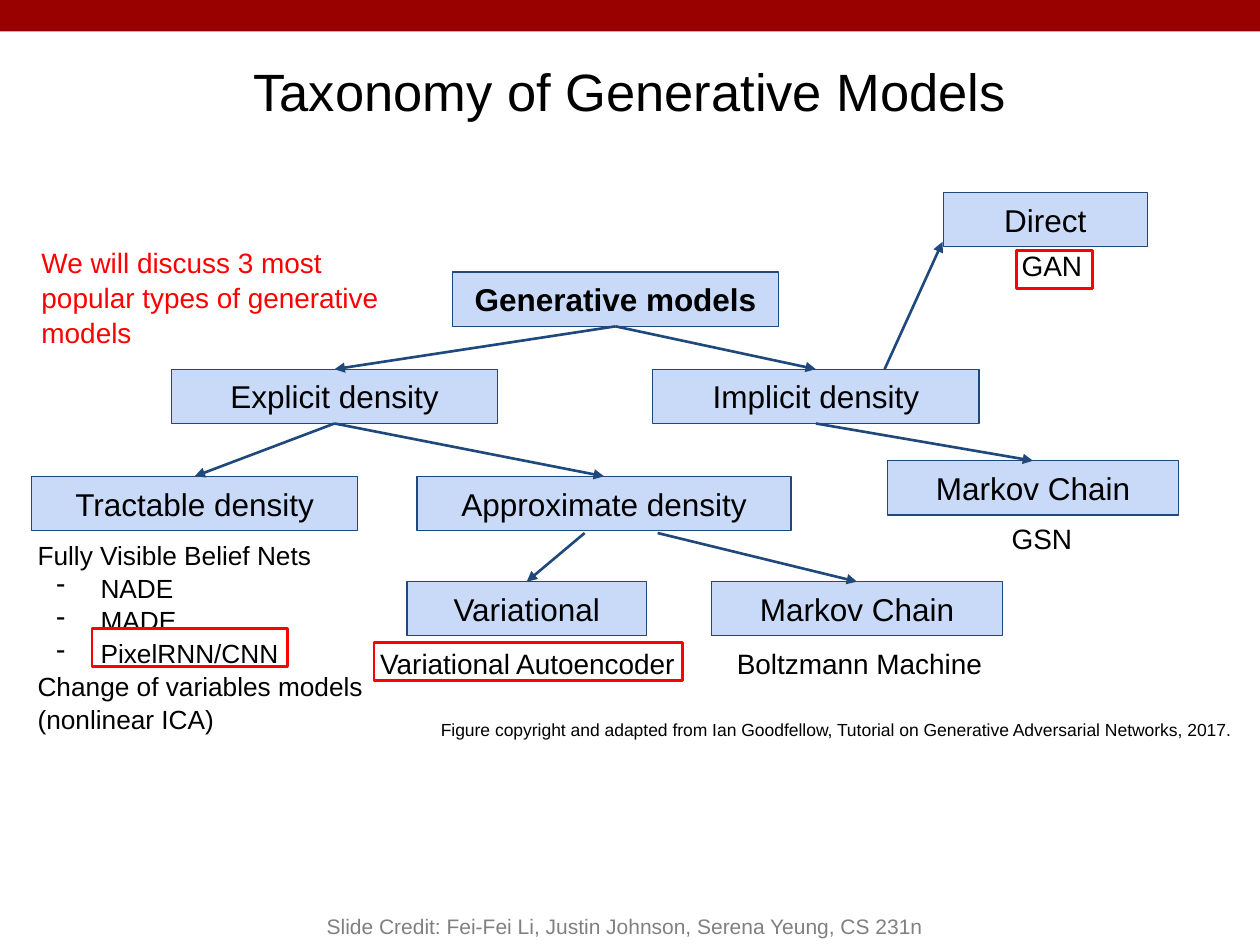
import pptx
import pptx.util
import pptx.dml.color
import pptx.enum.shapes
import pptx.enum.text
import pptx.oxml.ns
from lxml import etree

Pt = pptx.util.Pt
RGB = pptx.dml.color.RGBColor
SHAPE = pptx.enum.shapes.MSO_SHAPE
ALIGN = pptx.enum.text.PP_ALIGN
ANCHOR = pptx.enum.text.MSO_ANCHOR
qn = pptx.oxml.ns.qn

BLACK = RGB(0x00, 0x00, 0x00)
RED = RGB(0xFF, 0x00, 0x00)
MAROON = RGB(0x99, 0x00, 0x00)
NAVY = RGB(0x1F, 0x49, 0x7D)
PALE_BLUE = RGB(0xC9, 0xDA, 0xF8)
GREY = RGB(0x80, 0x80, 0x80)

TOP, BOTTOM = 0, 2
NODE_H = 31


def write(tf, text, size=16, color=BLACK, bold=False, align=ALIGN.LEFT,
          anchor=ANCHOR.TOP, inset=7.2, spacing=None):
    """Fill a text frame; lines starting with "- " become dash bullets."""
    tf.word_wrap = True
    tf.vertical_anchor = anchor
    tf.margin_left = tf.margin_right = Pt(7.2)
    tf.margin_top = tf.margin_bottom = Pt(inset)
    for i, line in enumerate(text.split("\n")):
        p = tf.add_paragraph() if i else tf.paragraphs[0]
        p.alignment = align
        if spacing:
            p.line_spacing = spacing
        if line.startswith("- "):
            line = line[2:]
            pPr = p._p.get_or_add_pPr()
            pPr.set("marL", str(Pt(36)))
            pPr.set("indent", str(-Pt(25.2)))
            etree.SubElement(pPr, qn("a:buChar")).set("char", "-")
        r = p.add_run()
        r.text = line
        r.font.name = "Arial"
        r.font.size = Pt(size)
        r.font.bold = bold
        r.font.color.rgb = color


class Deck:
    """Holds the style and the current slide."""

    def __init__(self, prs):
        self.s = prs.slides.add_slide(prs.slide_layouts[6])

    def rect(self, x, y, w, h, fill=None, line=None, width=1.5):
        sp = self.s.shapes.add_shape(SHAPE.RECTANGLE, Pt(x), Pt(y), Pt(w), Pt(h))
        sp.shadow.inherit = False
        if fill is None:
            sp.fill.background()
        else:
            sp.fill.solid()
            sp.fill.fore_color.rgb = fill
        if line is None:
            sp.line.fill.background()
        else:
            sp.line.color.rgb = line
            sp.line.width = Pt(width)
        return sp

    def node(self, text, x, y, w, bold=False):
        sp = self.rect(x, y, w, NODE_H, PALE_BLUE, NAVY, 0.75)
        write(sp.text_frame, text, size=18, bold=bold,
              align=ALIGN.CENTER, anchor=ANCHOR.MIDDLE)
        return sp

    def label(self, text, x, y, w, h=39, **fmt):
        sp = self.s.shapes.add_textbox(Pt(x), Pt(y), Pt(w), Pt(h))
        write(sp.text_frame, text, **fmt)

    def frame(self, x, y, w):
        self.rect(x, y, w, 21.6, line=RED)

    def arrow(self, start=(0, 0), end=(0, 0), parent=None, child=None):
        """Arrow between points, or joined to a parent's bottom / child's top."""
        c = self.s.shapes.add_connector(
            pptx.enum.shapes.MSO_CONNECTOR.STRAIGHT, *map(Pt, (*start, *end)))
        if parent is not None:
            c.begin_connect(parent, BOTTOM)
        if child is not None:
            c.end_connect(child, TOP)
        c.line.color.rgb = NAVY
        c.line.width = Pt(1.5)
        etree.SubElement(c.line._get_or_add_ln(), qn("a:tailEnd")).set("type", "triangle")
        etree.SubElement(c._element.spPr, qn("a:effectLst"))


def main():
    prs = pptx.Presentation()
    prs.slide_width, prs.slide_height = Pt(720), Pt(540)
    d = Deck(prs)

    # Top band and title
    d.rect(0, 0, 720, 18, MAROON)
    d.label("Taxonomy of Generative Models", 36, 18, 648, 67.7, size=30,
            align=ALIGN.CENTER, anchor=ANCHOR.MIDDLE)

    # Examples of tractable density
    d.label("Fully Visible Belief Nets\n- NADE\n- MADE\n- PixelRNN/CNN\n"
            "Change of variables models (nonlinear ICA)",
            14.4, 300.2, 218.9, size=15, spacing=1.04)

    # Tree nodes
    root = d.node("Generative models", 258.5, 155.5, 186.5, bold=True)
    explicit = d.node("Explicit density", 97.9, 211, 186.5)
    implicit = d.node("Implicit density", 373, 211, 186.5)
    d.node("Direct", 539, 110, 116.6)
    tractable = d.node("Tractable density", 18, 272.2, 186.5)
    approximate = d.node("Approximate density", 238.3, 272.2, 213.8)
    implicit_chain = d.node("Markov Chain", 507.2, 263.3, 166.3)
    variational = d.node("Variational", 232.6, 332.4, 136.8)
    approximate_chain = d.node("Markov Chain", 406.6, 332.4, 166.3)

    # Example models under the leaves
    for text, x, y, w in (("Variational Autoencoder", 210.2, 362.2, 230.4),
                          ("Boltzmann Machine", 414, 362.2, 162.7),
                          ("GSN", 571, 290.9, 51.1),
                          ("GAN", 576.7, 134.6, 51.1)):
        d.label(text, x, y, w)

    # Arrows
    for parent, child in ((explicit, tractable), (explicit, approximate),
                          (root, explicit), (root, implicit),
                          (implicit, implicit_chain)):
        d.arrow(parent=parent, child=child)
    d.arrow(start=(505.5, 211), end=(538.6, 138.2))
    d.arrow(start=(375.8, 304.6), child=approximate_chain)
    d.arrow(start=(334.1, 304.6), child=variational)

    # Red frames around the three discussed models
    for x, y, w in ((52.6, 359.3, 111.6), (213.8, 367.2, 176.4), (581, 143.3, 43.2)):
        d.frame(x, y, w)

    # Remarks and credits
    d.label("We will discuss 3 most popular types of generative models",
            16.6, 132.5, 221.8, 33.8, color=RED, spacing=1.04)
    d.label("Figure copyright and adapted from Ian Goodfellow, "
            "Tutorial on Generative Adversarial Networks, 2017.",
            244.8, 404.6, 473, size=10)
    d.label("Slide Credit: Fei-Fei Li, Justin Johnson, Serena Yeung, CS 231n",
            144, 504, 426.2, 36, size=12, color=GREY, align=ALIGN.CENTER,
            anchor=ANCHOR.BOTTOM, inset=3.6)

    prs.save("out.pptx")


if __name__ == "__main__":
    main()
